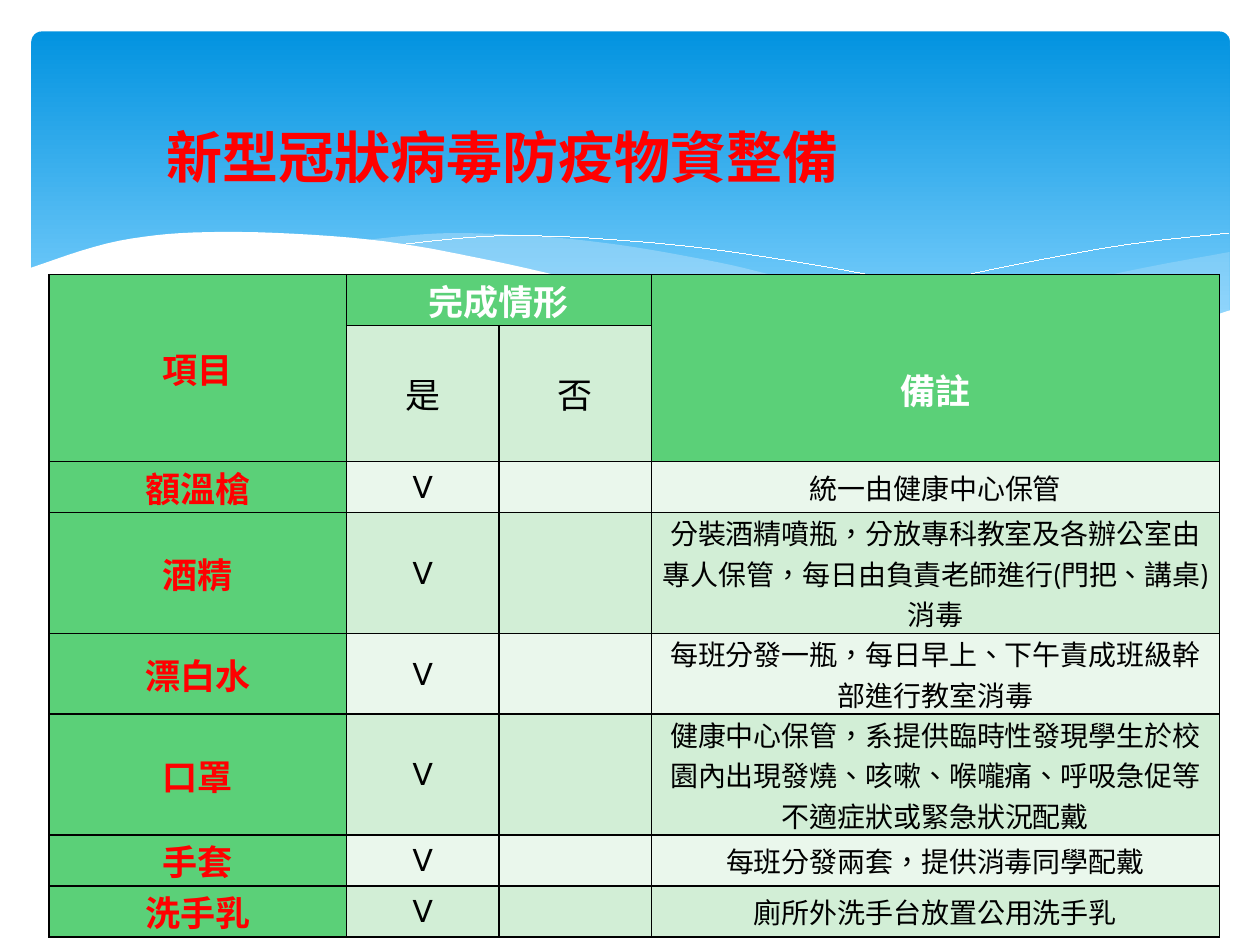
from lxml.etree import SubElement
from pptx import Presentation
from pptx.dml.color import RGBColor
from pptx.enum.lang import MSO_LANGUAGE_ID
from pptx.enum.shapes import MSO_SHAPE
from pptx.enum.text import MSO_ANCHOR, PP_ALIGN
from pptx.oxml import parse_xml
from pptx.oxml.ns import nsdecls, qn
from pptx.util import Inches, Pt

RED = RGBColor(0xFF, 0x00, 0x00)
BLACK = RGBColor(0x00, 0x00, 0x00)
WHITE = RGBColor(0xFF, 0xFF, 0xFF)
GREEN = RGBColor(0x5B, 0xD0, 0x78)
MINT = RGBColor(0xD2, 0xEE, 0xD6)
PALE = RGBColor(0xEA, 0xF7, 0xEC)
SKY = RGBColor(0x02, 0x93, 0xE0)
LIGHT_SKY = RGBColor(0x83, 0xD3, 0xFE)
MIST = RGBColor(0xC6, 0xE7, 0xFC)

TITLE = "新型冠狀病毒防疫物資整備"
HEADER_ROWS = [
    ("項目", "完成情形", "", "備註"),
    ("", "是", "否", ""),
]
SUPPLIES = [
    ("額溫槍", "統一由健康中心保管"),
    ("酒精", "分裝酒精噴瓶，分放專科教室及各辦公室由專人保管，每日由負責老師進行(門把、講桌)消毒"),
    ("漂白水", "每班分發一瓶，每日早上、下午責成班級幹部進行教室消毒"),
    ("口罩", "健康中心保管，系提供臨時性發現學生於校園內出現發燒、咳嗽、喉嚨痛、呼吸急促等不適症狀或緊急狀況配戴"),
    ("手套", "每班分發兩套，提供消毒同學配戴"),
    ("洗手乳", "廁所外洗手台放置公用洗手乳"),
]
CHECKLIST = HEADER_ROWS + [(item, "V", "", remark) for item, remark in SUPPLIES]
MERGED_CELLS = [((0, 0), (1, 0)), ((0, 1), (0, 2)), ((0, 3), (1, 3))]
COLUMN_WIDTHS = [2.36, 1.21, 1.21, 4.51]
SINGLE_LINE, DOUBLE_LINE, TRIPLE_LINE, OPTION_ROW = 0.4, 0.64, 0.95, 1.08
ROW_HEIGHTS = [SINGLE_LINE, OPTION_ROW, SINGLE_LINE, TRIPLE_LINE,
               DOUBLE_LINE, TRIPLE_LINE, SINGLE_LINE, SINGLE_LINE]

TITLE_LOOK = {"name": "Arial", "size": Pt(32), "bold": True, "color": RED}
ITEM = {"name": "Cabin", "size": Pt(20), "bold": True, "color": RED}
HEADING = ITEM | {"color": WHITE}
OPTION = ITEM | {"bold": False, "color": BLACK}
MARK = OPTION | {"size": Pt(18)}
REMARK = OPTION | {"size": Pt(16)}
HEADER_LOOKS = [
    (ITEM, HEADING, HEADING, HEADING),
    (ITEM, OPTION, OPTION, HEADING),
]
SUPPLY_LOOKS = (ITEM, MARK, MARK, REMARK)

STEPS_PER_ARC = 8
HAIRLINE = Pt(0.01)
FILLED_WAVES = [
    {"color": MIST, "opacity": 29, "edges": [
        [(9.76, 2), (8.91, 2.16), (8.05, 2.37), (7.29, 2.53), (6.61, 2.65)],
        [(6.61, 2.65), (7.32, 2.74), (8.14, 2.78), (8.97, 2.7), (9.76, 2.47)],
    ]},
    {"color": MIST, "opacity": 40, "edges": [
        [(2.86, 1.91), (3.61, 1.85), (4.65, 1.91), (5.69, 2.08), (6.68, 2.31), (8.93, 2.73)],
        [(8.93, 2.73), (8.07, 2.78), (7.09, 2.72), (6.01, 2.55), (4.49, 2.22), (2.86, 1.91)],
    ]},
]
CREST_LINES = [
    [(3.09, 1.95), (4.01, 1.87), (5.1, 1.92), (6.08, 2.04), (7.27, 2.26), (9.07, 2.72)],
    [(6.13, 2.57), (7.2, 2.29), (8.06, 2.1), (8.95, 1.94), (9.75, 1.85)],
]
FRONT_WAVE = {"color": WHITE, "opacity": 100, "edges": [
    [(9.77, 2.46), (8.99, 2.69), (8.09, 2.77), (7.08, 2.7), (6.03, 2.54), (5.03, 2.33),
     (3.91, 2.07), (2.92, 1.9), (1.77, 1.84), (0.95, 1.91), (0.23, 2.13)],
    [(0.23, 3.29), (9.77, 3.29)],
]}


def spline(before, start, end, after, t):
    return (2 * start + (end - before) * t
            + (2 * before - 5 * start + 4 * end - after) * t ** 2
            + (3 * start - before - 3 * end + after) * t ** 3) / 2


def smooth_curve(knots):
    padded = [knots[0], *knots, knots[-1]]
    points = [knots[0]]
    for arc in zip(padded, padded[1:], padded[2:], padded[3:]):
        for step in range(1, STEPS_PER_ARC + 1):
            points.append(tuple(spline(*axis, step / STEPS_PER_ARC) for axis in zip(*arc)))
    return points


def draw_path(page, edges, close):
    units = [(x * 1000, y * 1000) for knots in edges for x, y in smooth_curve(knots)]
    builder = page.shapes.build_freeform(*units[0], scale=Inches(1) / 1000)
    builder.add_line_segments(units[1:], close=close)
    path_shape = builder.convert_to_shape()
    path_shape.shadow.inherit = False
    return path_shape


def add_filled_wave(page, color, opacity, edges):
    wave = draw_path(page, edges, close=True)
    wave.line.fill.background()
    wave.fill.solid()
    wave.fill.fore_color.rgb = color
    tint = wave.fill._xPr.find(".//" + qn("a:srgbClr"))
    SubElement(tint, qn("a:alpha"), val=str(opacity * 1000))


def add_crest_line(page, knots):
    crest = draw_path(page, [knots], close=False)
    crest.fill.background()
    crest.line.color.rgb = WHITE
    crest.line.width = HAIRLINE


def add_banner(page):
    banner = page.shapes.add_shape(
        MSO_SHAPE.ROUNDED_RECTANGLE, Inches(0.25), Inches(0.25), Inches(9.51), Inches(2.7))
    banner.adjustments[0] = 0.03
    banner.shadow.inherit = False
    banner.line.fill.background()
    banner.fill.gradient()
    banner.fill.gradient_angle = 270
    for stop, color, position in zip(banner.fill.gradient_stops, (SKY, LIGHT_SKY), (0, 0.9)):
        stop.color.rgb = color
        stop.position = position


def write(para, text, look, alignment):
    para.alignment = alignment
    span = para.add_run()
    span.text = text
    span.font.language_id = MSO_LANGUAGE_ID.TRADITIONAL_CHINESE
    for name, value in look.items():
        if name == "color":
            span.font.color.rgb = value
        else:
            setattr(span.font, name, value)


def style_cell(cell, fill):
    properties = cell._tc.get_or_add_tcPr()
    for side in ("lnL", "lnR", "lnT", "lnB"):
        properties.append(parse_xml(
            f'<a:{side} {nsdecls("a")} w="{Pt(1)}"><a:solidFill>'
            f'<a:srgbClr val="{BLACK}"/></a:solidFill></a:{side}>'))
    cell.fill.solid()
    cell.fill.fore_color.rgb = fill
    cell.vertical_anchor = MSO_ANCHOR.MIDDLE
    cell.margin_left = cell.margin_right = Inches(0.06)
    cell.margin_top = cell.margin_bottom = 0


def add_checklist(page):
    table = page.shapes.add_table(
        len(ROW_HEIGHTS), len(COLUMN_WIDTHS), Inches(0.39), Inches(2.18),
        Inches(sum(COLUMN_WIDTHS)), Inches(sum(ROW_HEIGHTS))).table
    table.first_row = table.horz_banding = False
    for column, width in zip(table.columns, COLUMN_WIDTHS):
        column.width = Inches(width)
    for row, height in zip(table.rows, ROW_HEIGHTS):
        row.height = Inches(height)

    row_looks = HEADER_LOOKS + [SUPPLY_LOOKS] * len(SUPPLIES)
    for row, (texts, looks) in enumerate(zip(CHECKLIST, row_looks)):
        band = (PALE, MINT)[row % 2]
        for column, (text, look) in enumerate(zip(texts, looks)):
            cell = table.cell(row, column)
            style_cell(cell, GREEN if look in (ITEM, HEADING) else band)
            if text:
                write(cell.text_frame.paragraphs[0], text, look, PP_ALIGN.CENTER)

    for first, last in MERGED_CELLS:
        table.cell(*first).merge(table.cell(*last))
    remark_heading = table.cell(0, 3)
    remark_heading.margin_top = Inches(0.34)


def add_title(page):
    box = page.shapes.add_textbox(Inches(1.22), Inches(0.92), Inches(7.64), Inches(0.64))
    frame = box.text_frame
    frame.word_wrap = True
    frame.vertical_anchor = MSO_ANCHOR.MIDDLE
    write(frame.paragraphs[0], TITLE, TITLE_LOOK, PP_ALIGN.JUSTIFY)


def main():
    deck = Presentation()
    deck.slide_width, deck.slide_height = Inches(10), Inches(7.5)
    page = deck.slides.add_slide(deck.slide_layouts[6])
    add_banner(page)
    for wave in FILLED_WAVES:
        add_filled_wave(page, **wave)
    for knots in CREST_LINES:
        add_crest_line(page, knots)
    add_filled_wave(page, **FRONT_WAVE)
    add_checklist(page)
    add_title(page)
    deck.save("out.pptx")


if __name__ == "__main__":
    main()
